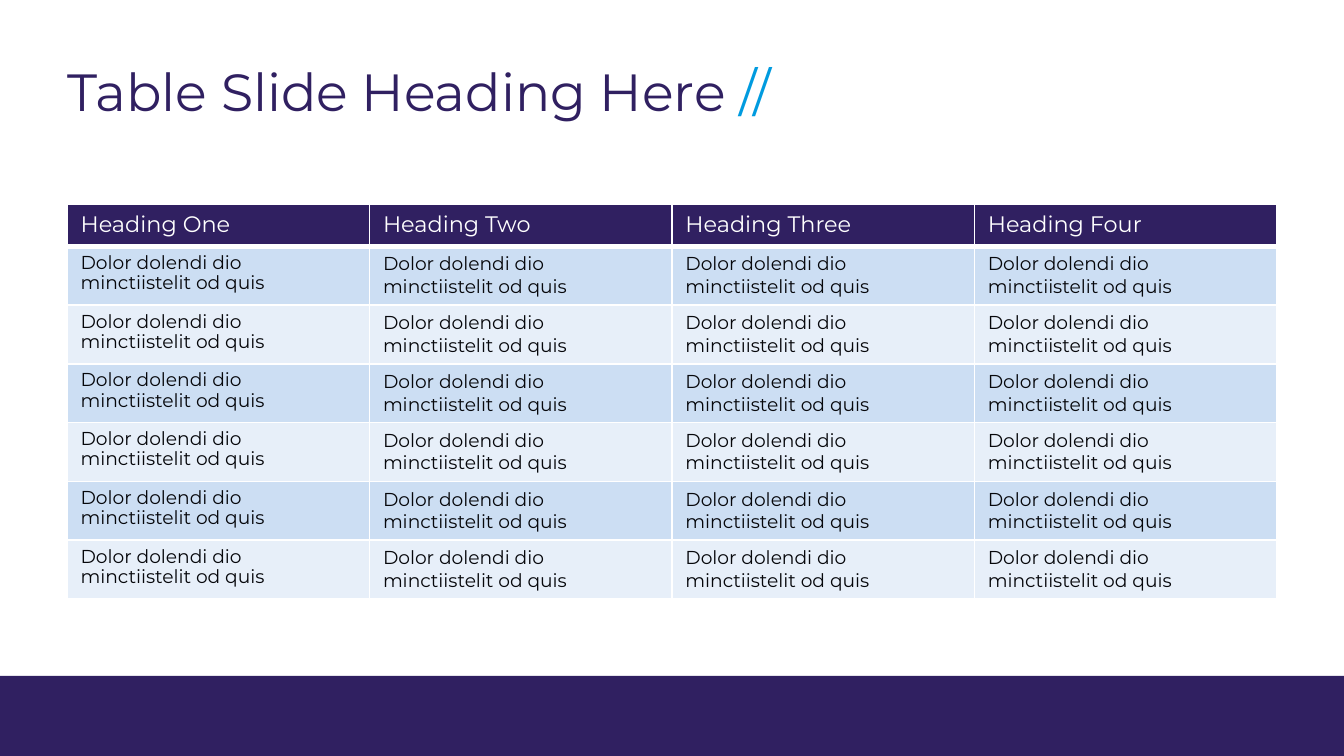
from lxml.etree import SubElement
from pptx import Presentation
from pptx.dml.color import RGBColor as Color
from pptx.enum.shapes import MSO_SHAPE as Shape
from pptx.enum.text import MSO_ANCHOR as Anchor, MSO_AUTO_SIZE as AutoSize, PP_ALIGN as Align
from pptx.oxml.ns import qn
from pptx.util import Inches, Pt

WIDTH = 10
HEIGHT = WIDTH * 9 / 16
MARGIN = WIDTH / 20
CONTENT_WIDTH = WIDTH - 2 * MARGIN
FONT = "Montserrat"
COLORS = {
    "navy": "302061",
    "blue": "009BDF",
    "ink": "06070B",
    "white": "FFFFFF",
    "band_dark": "CCDEF3",
    "band_light": "E7EFF9",
}
HEADINGS = ["Heading One", "Heading Two", "Heading Three", "Heading Four"]
BODY_TEXT = "Dolor dolendi dio minctiistelit od quis"
BODY_ROWS = 6
HEADER_HEIGHT = HEIGHT / 18


def color(name):
    return Color.from_string(COLORS[name])


def inches(box):
    return [Inches(length) for length in box]


def style_font(font, size, color_name):
    font.name = FONT
    font.size = Pt(size)
    font.bold = False
    font.color.rgb = color(color_name)


def add_footer(page, box):
    footer = page.shapes.add_shape(Shape.RECTANGLE, *inches(box))
    footer.shadow.inherit = False
    footer.fill.solid()
    footer.fill.fore_color.rgb = color("navy")
    footer.line.fill.background()


def place_title(page, box, text, accent):
    title = page.shapes.title
    title.left, title.top, title.width, title.height = inches(box)
    frame = title.text_frame
    frame.margin_left = frame.margin_right = 0
    frame.margin_top = frame.margin_bottom = Inches(0.05)
    frame.vertical_anchor = Anchor.TOP
    frame.auto_size = AutoSize.NONE
    frame.word_wrap = True
    para = frame.paragraphs[0]
    para.alignment = Align.LEFT
    para.line_spacing = 0.9
    style_font(para.font, 28, "navy")
    para.add_run().text = text
    span = para.add_run()
    span.text = accent
    span.font.color.rgb = color("blue")


def set_borders(cell, widths):
    """Draw white borders; widths maps each side to points."""
    properties = cell._tc.get_or_add_tcPr()
    for side, width in widths.items():
        line = SubElement(properties, qn(f"a:ln{side}"), w=str(Pt(width)))
        fill = SubElement(line, qn("a:solidFill"))
        SubElement(fill, qn("a:srgbClr"), val=COLORS["white"])


def fill_cell(cell, text, size, text_color, fill_color, top=1, bottom=1):
    set_borders(cell, {"L": 1, "R": 1, "T": top, "B": bottom})
    cell.fill.solid()
    cell.fill.fore_color.rgb = color(fill_color)
    cell.text = text
    para = cell.text_frame.paragraphs[0]
    style_font(para.font, size, text_color)
    return para


def add_grid(page, box):
    table = page.shapes.add_table(BODY_ROWS + 1, len(HEADINGS), *inches(box)).table
    table.rows[0].height = Inches(HEADER_HEIGHT)
    for row in range(1, BODY_ROWS + 1):
        table.rows[row].height = Inches((box[3] - HEADER_HEIGHT) / BODY_ROWS)
    for column, heading in enumerate(HEADINGS):
        fill_cell(table.cell(0, column), heading, 12, "white", "navy", bottom=3)
        for row in range(1, BODY_ROWS + 1):
            band = "band_dark" if row % 2 else "band_light"
            para = fill_cell(table.cell(row, column), BODY_TEXT, 10, "ink", band,
                             top=3 if row == 1 else 1)
            if column == 0:
                para.line_spacing = 0.9


def main():
    deck = Presentation()
    deck.slide_width, deck.slide_height = inches((WIDTH, HEIGHT))
    page = deck.slides.add_slide(deck.slide_layouts.get_by_name("Title Only"))
    page.background.fill.solid()
    page.background.fill.fore_color.rgb = color("white")
    footer_top = 5.03
    add_footer(page, (0, footer_top, WIDTH, HEIGHT - footer_top))
    place_title(page, (MARGIN, 0.44, CONTENT_WIDTH, 0.9), "Table Slide Heading Here ", "//")
    add_grid(page, (MARGIN, 1.52, CONTENT_WIDTH, 2.91))
    deck.save("out.pptx")


if __name__ == "__main__":
    main()
